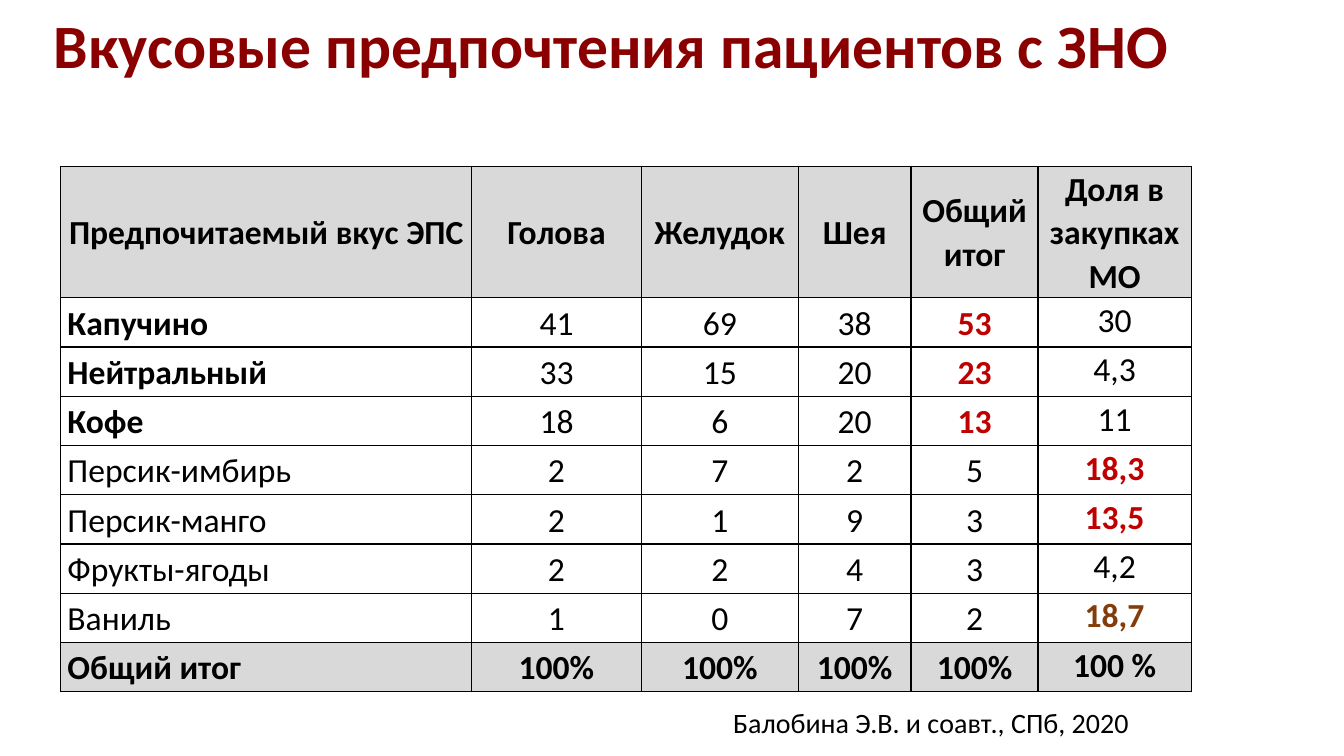
from dataclasses import dataclass

from lxml import etree
from pptx import Presentation
from pptx.dml.color import RGBColor
from pptx.enum.text import MSO_ANCHOR, PP_ALIGN
from pptx.oxml import ns
from pptx.util import Cm, Pt

TITLE = "Вкусовые предпочтения пациентов с ЗНО"
SOURCE = "Балобина Э.В. и соавт., СПб, 2020"
HEADER = ("Предпочитаемый вкус ЭПС", "Голова", "Желудок", "Шея",
          "Общий итог", "Доля в закупках МО")
FLAVOURS = [
    ("Капучино", "41", "69", "38", "53", "30"),
    ("Нейтральный", "33", "15", "20", "23", "4,3"),
    ("Кофе", "18", "6", "20", "13", "11"),
    ("Персик-имбирь", "2", "7", "2", "5", "18,3"),
    ("Персик-манго", "2", "1", "9", "3", "13,5"),
    ("Фрукты-ягоды", "2", "2", "4", "3", "4,2"),
    ("Ваниль", "1", "0", "7", "2", "18,7"),
]
TOTAL = ("Общий итог", "100%", "100%", "100%", "100%", "100 %")
ROWS = [HEADER, *FLAVOURS, TOTAL]
LEADING_FLAVOURS = 3
COLUMN_WIDTHS = (10.36, 4.27, 3.96, 2.84, 3.2, 3.86)
HEADER_HEIGHT, ROW_HEIGHT = 3.3, 1.24


@dataclass(frozen=True)
class Theme:
    font: str = "Calibri"
    title_size: int = 44
    table_size: int = 24
    source_size: int = 20
    title: str = "8A0000"
    ink: str = "000000"
    red: str = "C00000"
    brown: str = "843C0B"
    band: str = "D9D9D9"
    border_width: float = 1


THEME = Theme()
# Highlighted values by (row, column)
HIGHLIGHTS = {(1, 4): THEME.red, (2, 4): THEME.red, (3, 4): THEME.red,
              (4, 5): THEME.red, (5, 5): THEME.red, (7, 5): THEME.brown}


def apply(target, formats):
    for name, value in formats.items():
        setattr(target, name, value)


def write(text_frame, content, size, color, bold=False, **paragraph_formats):
    paragraph = text_frame.paragraphs[0]
    apply(paragraph, paragraph_formats)
    run = paragraph.add_run()
    run.text = content
    apply(run.font, {"name": THEME.font, "size": Pt(size), "bold": bold})
    run.font.color.rgb = RGBColor.from_string(color)


def add_borders(cell):
    """Draw the four sides; they must come before the cell's fill in the XML."""
    properties = cell._tc.get_or_add_tcPr()
    for position, side in enumerate(("lnL", "lnR", "lnT", "lnB")):
        line = etree.Element(ns.qn(f"a:{side}"), w=str(Pt(THEME.border_width)))
        fill = etree.SubElement(line, ns.qn("a:solidFill"))
        etree.SubElement(fill, ns.qn("a:srgbClr"), val=THEME.ink)
        properties.insert(position, line)


def format_cell(cell, row, column):
    in_band = row in (0, len(ROWS) - 1)
    is_leader = column == 0 and row <= LEADING_FLAVOURS
    is_last_column = column == len(HEADER) - 1
    apply(cell, {
        "margin_left": Cm(0.17), "margin_right": Cm(0.17),
        "margin_top": 0, "margin_bottom": 0,
        "vertical_anchor": MSO_ANCHOR.TOP if is_last_column else MSO_ANCHOR.MIDDLE,
    })
    if in_band:
        cell.fill.solid()
        cell.fill.fore_color.rgb = RGBColor.from_string(THEME.band)
    else:
        cell.fill.background()
    add_borders(cell)
    left_aligned = column == 0 and row > 0
    write(cell.text_frame, ROWS[row][column], THEME.table_size,
          HIGHLIGHTS.get((row, column), THEME.ink),
          bold=in_band or is_leader or (row, column) in HIGHLIGHTS,
          alignment=PP_ALIGN.LEFT if left_aligned else PP_ALIGN.CENTER,
          line_spacing=1.07)


def add_title(slide):
    title = slide.shapes.title
    apply(title, {"left": Cm(0.81), "top": Cm(0.25),
                  "width": Cm(29.21), "height": Cm(3.68)})
    apply(title.text_frame, {"vertical_anchor": MSO_ANCHOR.TOP, "word_wrap": True})
    write(title.text_frame, TITLE, THEME.title_size, THEME.title, bold=True,
          alignment=PP_ALIGN.CENTER, line_spacing=0.9)


def add_flavour_table(slide):
    heights = [HEADER_HEIGHT] + [ROW_HEIGHT] * (len(ROWS) - 1)
    table = slide.shapes.add_table(
        len(ROWS), len(HEADER), Cm(1.53), Cm(4.19),
        Cm(sum(COLUMN_WIDTHS)), Cm(sum(heights))).table
    apply(table, {"first_row": False, "horz_banding": False})
    for column, width in zip(table.columns, COLUMN_WIDTHS):
        column.width = Cm(width)
    for row, height in zip(table.rows, heights):
        row.height = Cm(height)
    for row in range(len(ROWS)):
        for column in range(len(HEADER)):
            format_cell(table.cell(row, column), row, column)


def add_source(slide):
    source = slide.shapes.add_textbox(Cm(17.75), Cm(17.65), Cm(10.95), Cm(1.12))
    source.text_frame.word_wrap = True
    write(source.text_frame, SOURCE, THEME.source_size, THEME.ink,
          alignment=PP_ALIGN.RIGHT)


def main():
    presentation = Presentation()
    apply(presentation, {"slide_width": Cm(33.87), "slide_height": Cm(19.05)})
    slide = presentation.slides.add_slide(presentation.slide_layouts[5])
    add_title(slide)
    add_flavour_table(slide)
    add_source(slide)
    presentation.save("out.pptx")


if __name__ == "__main__":
    main()
